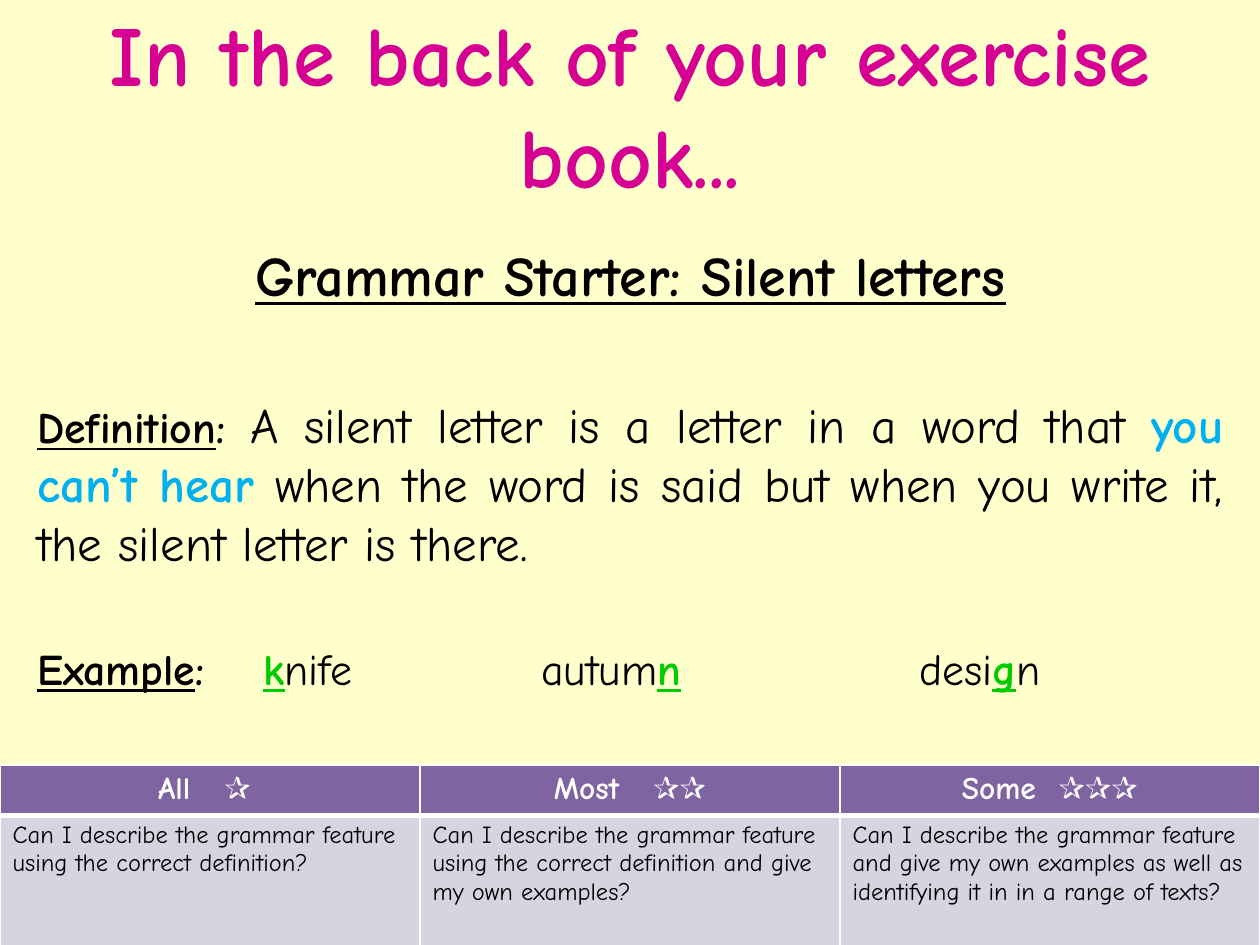
"""Build a grammar starter slide about silent letters, with tiered success criteria."""
from lxml import etree
from pptx import Presentation
from pptx import util as u
from pptx.dml.color import RGBColor
from pptx.enum import text
from pptx.oxml.ns import qn

CREAM = RGBColor(0xFF, 0xFF, 0xCC)
PINK = RGBColor(0xD6, 0x00, 0x93)
BLACK = RGBColor(0x00, 0x00, 0x00)
BLUE = RGBColor(0x00, 0xB0, 0xF0)
GREEN = RGBColor(0x00, 0xCC, 0x00)
WHITE = RGBColor(0xFF, 0xFF, 0xFF)
PURPLE = RGBColor(0x80, 0x64, 0xA2)
LILAC = RGBColor(0xD8, 0xD3, 0xE0)
FONT = "Comic Neue"
SCALE = 914400 / 126


def px(*lengths):
    return [u.Emu(round(length * SCALE)) for length in lengths]


def add_run(paragraph, words, size, color=BLACK, **styles):
    run = paragraph.add_run()
    run.text = words
    formats = {"name": FONT, "size": u.Pt(size), "bold": False, "underline": False, **styles}
    for key, value in formats.items():
        setattr(run.font, key, value)
    run.font.color.rgb = color
    return run


deck = Presentation()
deck.slide_width, deck.slide_height = px(1260, 945)
slide = deck.slides.add_slide(deck.slide_layouts[5])
slide.background.fill.solid()
slide.background.fill.fore_color.rgb = CREAM

title = slide.shapes.title
title.left, title.top, title.width, title.height = px(0, 2, 1260, 203)
title.text_frame.auto_size = text.MSO_AUTO_SIZE.NONE
title.text_frame.vertical_anchor = text.MSO_ANCHOR.MIDDLE
heading = title.text_frame.paragraphs[0]
heading.alignment = text.PP_ALIGN.CENTER
add_run(heading, "In the back of your exercise book...", 48.6, PINK, bold=True)

lesson = slide.shapes.add_textbox(*px(25, 234, 1211, 610)).text_frame
lesson.word_wrap = True
topic = lesson.paragraphs[0]
definition = lesson.add_paragraph()
example = lesson.add_paragraph()
for paragraph, alignment, gap in [
    (topic, text.PP_ALIGN.CENTER, 0),
    (definition, text.PP_ALIGN.JUSTIFY, 50),
    (example, text.PP_ALIGN.JUSTIFY, 40),
]:
    paragraph.alignment = alignment
    paragraph.space_before = u.Pt(gap)

add_run(topic, "Grammar Starter: Silent letters", 32, bold=True, underline=True)

add_run(definition, "Definition", 25, bold=True, underline=True)
add_run(definition, ": ", 25, bold=True)
add_run(definition, "A silent letter is a letter in a word that ", 28)
add_run(definition, "you can’t hear", 28, BLUE, bold=True)
add_run(definition, " when the word is said but when you write it, the silent letter is there.", 28)

add_run(example, "Example", 25, bold=True, underline=True)
add_run(example, ":", 25, bold=True)
tab_stops = etree.SubElement(example._p.get_or_add_pPr(), qn("a:tabLst"))
for stop, before, silent, after in [
    (226, "", "k", "nife"),
    (504, "autum", "n", ""),
    (882, "desi", "g", "n"),
]:
    etree.SubElement(tab_stops, qn("a:tab"), pos=str(px(stop)[0]), algn="l")
    add_run(example, "\t" + before, 25)
    add_run(example, silent, 25, GREEN, bold=True, underline=True)
    if after:
        add_run(example, after, 25)

criteria = slide.shapes.add_table(2, 3, *px(0, 765, 1260, 172)).table
for row, height in zip(criteria.rows, px(42, 130)):
    row.height = height
levels = [
    ("All", 1300, "✰ ", "Can I describe the grammar feature using the correct definition?"),
    ("Most", 1300, "✰✰", "Can I describe the grammar feature using the correct definition "
     "and give my own examples?"),
    ("Some", 650, "✰✰✰", "Can I describe the grammar feature and give my own examples "
     "as well as identifying it in in a range of texts?"),
]
for column, (level, gap, stars, question) in enumerate(levels):
    criteria.columns[column].width = px(420)[0]
    header, body = criteria.cell(0, column), criteria.cell(1, column)

    label = header.text_frame.paragraphs[0]
    label.alignment = text.PP_ALIGN.CENTER
    add_run(label, level, 18, WHITE, bold=True)
    spacer = add_run(label, " ", 18, WHITE, bold=True)
    spacer.font._element.set("spc", str(gap))
    add_run(label, stars, 18, WHITE, bold=True)
    add_run(body.text_frame.paragraphs[0], question, 14)

    for cell, fill, bottom, top in [(header, PURPLE, 3, 1), (body, LILAC, 1, 3)]:
        cell.fill.solid()
        cell.fill.fore_color.rgb = fill
        properties = cell._tc.get_or_add_tcPr()
        for index, (side, weight) in enumerate(
            [("lnL", 1), ("lnR", 1), ("lnT", top), ("lnB", bottom)]
        ):
            border = etree.Element(qn("a:" + side), w=str(u.Pt(weight)))
            paint = etree.SubElement(border, qn("a:solidFill"))
            etree.SubElement(paint, qn("a:srgbClr"), val=str(WHITE))
            properties.insert(index, border)

deck.save("out.pptx")
